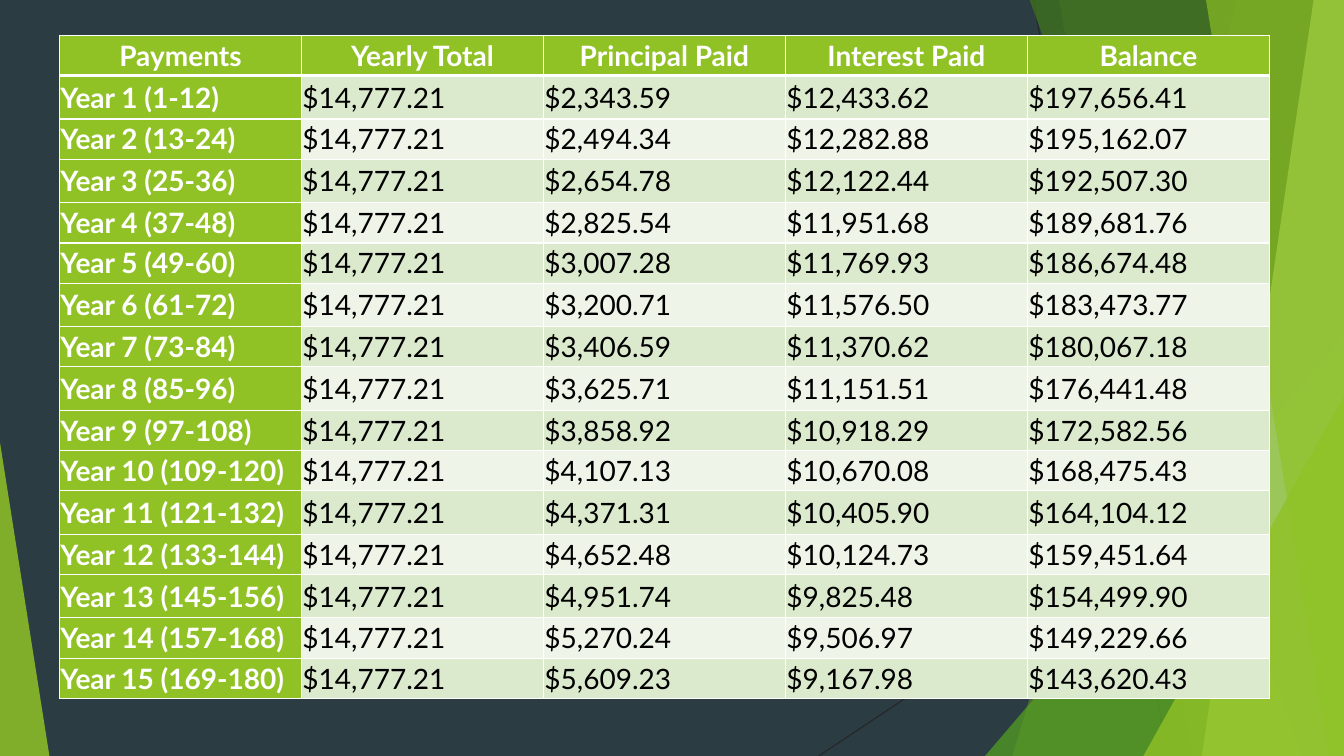
from dataclasses import dataclass

from lxml.etree import SubElement
from pptx import Presentation
from pptx.dml.color import RGBColor
from pptx.enum.shapes import MSO_CONNECTOR, MSO_SHAPE
from pptx.enum.text import MSO_ANCHOR, PP_ALIGN
from pptx.oxml.ns import qn
from pptx.shapes.autoshape import Shape
from pptx.slide import Slide
from pptx.table import Table, _Cell
from pptx.util import Inches, Pt

COLORS = {
    "background": "2C3C43", "line": "262626", "lime": "90C226",
    "green": "54A021", "forest": "3F7819", "pale": "C0E474",
    "white": "FFFFFF", "black": "000000",
    "odd_row": "DBE9CD", "even_row": "EEF4E8",
}
FONT = "Lato"
SLIDE_WIDTH, SLIDE_HEIGHT = 13.33, 7.5
PANEL_TOP = -0.01


@dataclass
class Ray:
    start: tuple[float, float]
    end: tuple[float, float]


@dataclass
class Panel:
    """A band whose slanted left edge runs down to the bottom of the slide."""
    top_left: float
    bottom_left: float
    color: str
    opacity: int


@dataclass
class Wedge:
    """A triangle standing on the bottom of the slide."""
    left: float
    top: float
    width: float
    apex: float
    color: str
    opacity: int


# Background decoration, from back to front
RAYS = [
    Ray((10.25, 0), (11.58, SLIDE_HEIGHT)),
    Ray((SLIDE_WIDTH, 4.03), (8.12, SLIDE_HEIGHT)),
]
FACETS = [
    Panel(12.28, 10.04, "lime", 30),
    Panel(10.5, 11.83, "lime", 20),
    Wedge(9.77, 3.33, 3.56, 1, "green", 72),
    Panel(10.21, 12.91, "forest", 70),
    Panel(13.03, 11.92, "pale", 70),
    Panel(11.96, 13.18, "lime", 65),
    Wedge(11.34, 3.93, 1.99, 1, "lime", 80),
    Wedge(0, 4.39, 0.49, 0, "lime", 85),
]

# Payment schedule: principal paid, interest paid, balance for each year
HEADERS = ["Payments", "Yearly Total", "Principal Paid", "Interest Paid", "Balance"]
YEARLY_TOTAL = 14777.21
YEARS = [
    (2343.59, 12433.62, 197656.41),
    (2494.34, 12282.88, 195162.07),
    (2654.78, 12122.44, 192507.30),
    (2825.54, 11951.68, 189681.76),
    (3007.28, 11769.93, 186674.48),
    (3200.71, 11576.50, 183473.77),
    (3406.59, 11370.62, 180067.18),
    (3625.71, 11151.51, 176441.48),
    (3858.92, 10918.29, 172582.56),
    (4107.13, 10670.08, 168475.43),
    (4371.31, 10405.90, 164104.12),
    (4652.48, 10124.73, 159451.64),
    (4951.74, 9825.48, 154499.90),
    (5270.24, 9506.97, 149229.66),
    (5609.23, 9167.98, 143620.43),
]


def rgb(name: str) -> RGBColor:
    return RGBColor.from_string(COLORS[name])


def draw_ray(slide: Slide, ray: Ray) -> None:
    connector = slide.shapes.add_connector(
        MSO_CONNECTOR.STRAIGHT, *map(Inches, ray.start + ray.end))
    connector.line.color.rgb = rgb("line")
    connector.line.width = Pt(0.75)
    SubElement(connector.element.spPr, qn("a:effectLst"))


def panel_shape(slide: Slide, panel: Panel) -> Shape:
    builder = slide.shapes.build_freeform(Inches(panel.top_left), Inches(PANEL_TOP))
    corners = [(SLIDE_WIDTH, PANEL_TOP), (SLIDE_WIDTH, SLIDE_HEIGHT),
               (panel.bottom_left, SLIDE_HEIGHT)]
    builder.add_line_segments([(Inches(x), Inches(y)) for x, y in corners])
    return builder.convert_to_shape()


def wedge_shape(slide: Slide, wedge: Wedge) -> Shape:
    shape = slide.shapes.add_shape(
        MSO_SHAPE.ISOSCELES_TRIANGLE, Inches(wedge.left), Inches(wedge.top),
        Inches(wedge.width), Inches(SLIDE_HEIGHT - wedge.top))
    shape.adjustments[0] = wedge.apex
    return shape


def draw_facet(slide: Slide, facet: Panel | Wedge) -> None:
    make_shape = panel_shape if isinstance(facet, Panel) else wedge_shape
    shape = make_shape(slide, facet)
    shape.shadow.inherit = False
    shape.line.fill.background()
    shape.fill.solid()
    shape.fill.fore_color.rgb = rgb(facet.color)
    color = shape.element.spPr.find(qn("a:solidFill")).find(qn("a:srgbClr"))
    SubElement(color, qn("a:alpha"), val=str(facet.opacity * 1000))


def set_borders(cell: _Cell, top: float, bottom: float) -> None:
    properties = cell._tc.get_or_add_tcPr()
    for side, width in (("L", 1), ("R", 1), ("T", top), ("B", bottom)):
        line = SubElement(properties, qn(f"a:ln{side}"), w=str(Pt(width)))
        fill = SubElement(line, qn("a:solidFill"))
        SubElement(fill, qn("a:srgbClr"), val=COLORS["white"])


def fill_cell(table: Table, row: int, column: int, text: str) -> None:
    cell = table.cell(row, column)
    is_header = row == 0
    is_label = is_header or column == 0
    set_borders(cell, top=3 if row == 1 else 1, bottom=3 if is_header else 1)
    cell.fill.solid()
    band = "odd_row" if row % 2 else "even_row"
    cell.fill.fore_color.rgb = rgb("lime" if is_label else band)
    cell.vertical_anchor = MSO_ANCHOR.MIDDLE
    cell.margin_left = cell.margin_right = Inches(0.01)
    cell.margin_top = cell.margin_bottom = Inches(0.01)
    cell.text = text
    paragraph = cell.text_frame.paragraphs[0]
    paragraph.alignment = PP_ALIGN.CENTER if is_header else PP_ALIGN.LEFT
    paragraph.font.name = FONT
    paragraph.font.size = Pt(20)
    paragraph.font.bold = is_label
    paragraph.font.color.rgb = rgb("white" if is_label else "black")


def draw_schedule(slide: Slide) -> None:
    rows = [HEADERS]
    for year, amounts in enumerate(YEARS, start=1):
        label = f"Year {year} ({12 * year - 11}-{12 * year})"
        rows.append([label] + [f"${value:,.2f}" for value in (YEARLY_TOTAL, *amounts)])
    table = slide.shapes.add_table(
        len(rows), len(HEADERS), Inches(0.59), Inches(0.35), Inches(12), Inches(6.61)).table
    table.first_col = True
    table.horz_banding = False
    for index, texts in enumerate(rows):
        table.rows[index].height = Inches(0.43 if index % 5 in (1, 3) else 0.4)
        for column, text in enumerate(texts):
            fill_cell(table, index, column, text)


def main() -> None:
    presentation = Presentation()
    presentation.slide_width = Inches(SLIDE_WIDTH)
    presentation.slide_height = Inches(SLIDE_HEIGHT)
    slide = presentation.slides.add_slide(presentation.slide_layouts[6])
    slide.background.fill.solid()
    slide.background.fill.fore_color.rgb = rgb("background")
    for ray in RAYS:
        draw_ray(slide, ray)
    for facet in FACETS:
        draw_facet(slide, facet)
    draw_schedule(slide)
    presentation.save("out.pptx")


if __name__ == "__main__":
    main()
